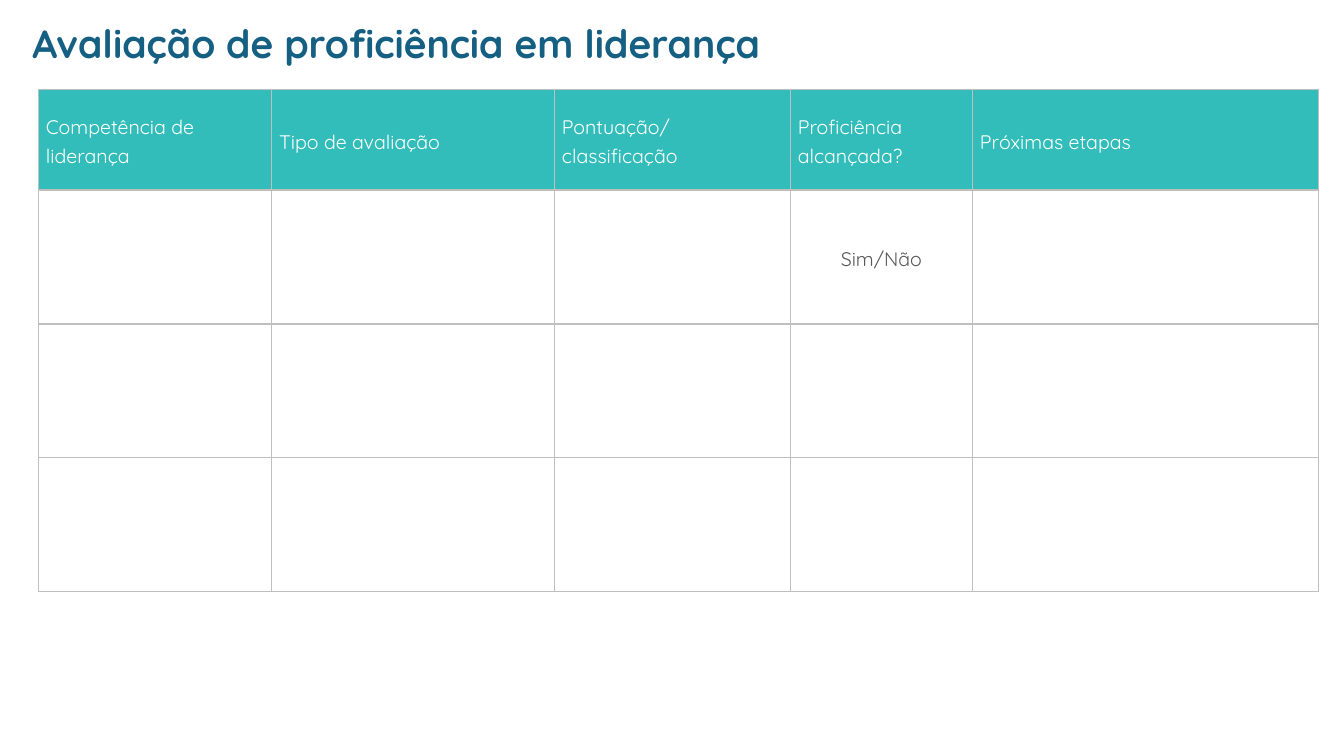
import pptx
import pptx.util
import pptx.dml.color
import pptx.enum.text
import pptx.oxml
import pptx.oxml.ns

Pt = pptx.util.Pt
Anchor = pptx.enum.text.MSO_ANCHOR
Align = pptx.enum.text.PP_ALIGN


def color(code):
    return pptx.dml.color.RGBColor.from_string(code)


class Deck:
    face = "Quicksand"
    navy = "156082"
    teal = "33BDBA"
    white = "FFFFFF"
    gray = "595959"
    rule = "BFBFBF"

    def __init__(self, slide):
        self.slide = slide

    def style(self, para, text, size, code, bold=False):
        para.text = text
        font = para.font
        font.name = self.face
        font.size = Pt(size)
        font.bold = bold
        font.color.rgb = color(code)

    def title(self, text, left, top, width, height):
        box = self.slide.shapes.add_textbox(Pt(left), Pt(top), Pt(width), Pt(height))
        frame = box.text_frame
        frame.word_wrap = True
        frame.auto_size = pptx.enum.text.MSO_AUTO_SIZE.SHAPE_TO_FIT_TEXT
        self.style(frame.paragraphs[0], text, 28, self.navy, True)

    def grid(self, left, top, widths, heights):
        frame = self.slide.shapes.add_table(
            len(heights), len(widths), Pt(left), Pt(top), Pt(sum(widths)), Pt(sum(heights))
        )
        table = frame.table
        table.horz_banding = False
        table.first_row = False
        for column, width in zip(table.columns, widths):
            column.width = Pt(width)
        for row, height in zip(table.rows, heights):
            row.height = Pt(height)
        for cell in table.iter_cells():
            self.border(cell)
            cell.fill.background()
        return table

    def border(self, cell):
        props = cell._tc.get_or_add_tcPr()
        space = pptx.oxml.ns.nsdecls("a")
        for side in "LRTB":
            props.append(pptx.oxml.parse_xml(
                f'<a:ln{side} {space} w="{Pt(1)}"><a:solidFill>'
                f'<a:srgbClr val="{self.rule}"/></a:solidFill></a:ln{side}>'
            ))

    def label(self, cell, text, code, align=Align.LEFT):
        cell.vertical_anchor = Anchor.MIDDLE
        cell.margin_left = cell.margin_right = Pt(5.4)
        cell.margin_top = cell.margin_bottom = 0
        para = cell.text_frame.paragraphs[0]
        self.style(para, text, 14, code)
        para.alignment = align
        para.line_spacing = 1.15
        para.space_after = Pt(8)

    def header(self, table, names):
        for cell, name in zip(table.rows[0].cells, names):
            cell.fill.solid()
            cell.fill.fore_color.rgb = color(self.teal)
            self.label(cell, name, self.white)


def main():
    show = pptx.Presentation()
    show.slide_width, show.slide_height = Pt(960), Pt(540)
    deck = Deck(show.slides.add_slide(show.slide_layouts[6]))
    deck.title("Avaliação de proficiência em liderança", 16, 10, 582, 41)
    table = deck.grid(27.4, 64, [166.6, 202, 168.6, 130, 247.2], [71.8] + [95.6] * 3)
    deck.header(table, [
        "Competência de liderança",
        "Tipo de avaliação",
        "Pontuação/\nclassificação",
        "Proficiência alcançada?",
        "Próximas etapas",
    ])
    deck.label(table.cell(1, 3), "Sim/Não", deck.gray, Align.CENTER)
    show.save("out.pptx")


if __name__ == "__main__":
    main()
